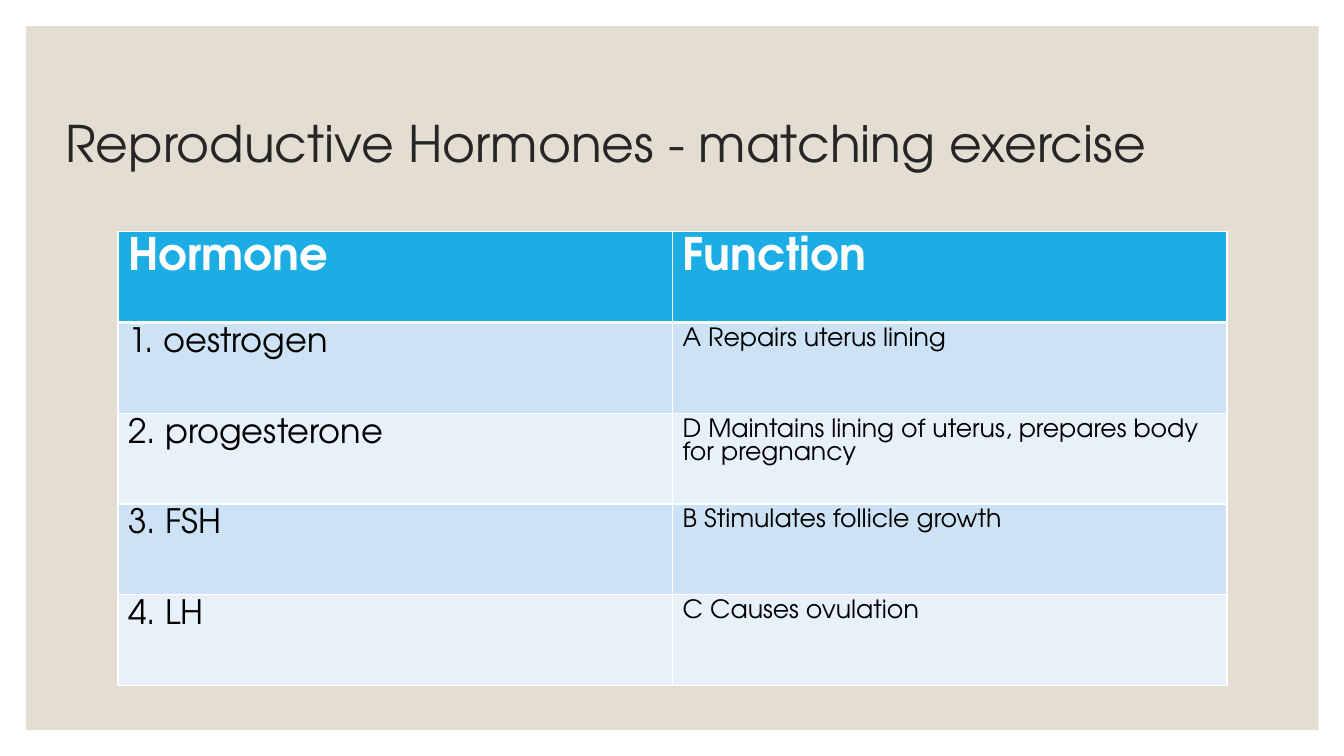
from lxml.etree import SubElement
from pptx import Presentation
from pptx.dml.color import RGBColor as Rgb
from pptx.enum.shapes import MSO_SHAPE as Shape
from pptx.enum.text import MSO_ANCHOR as Anchor
from pptx.oxml.ns import qn
from pptx.util import Inches, Pt

COLORS = {
    "panel": "E3DED1",
    "title": "262626",
    "header": "1CADE4",
    "odd": "CDE3F5",
    "even": "E8F1FA",
    "white": "FFFFFF",
    "black": "000000",
}
HORMONES = [
    ("Hormone", "Function"),
    ("1. oestrogen", "A Repairs uterus lining"),
    ("2. progesterone", "D Maintains lining of uterus, prepares body for pregnancy"),
    ("3. FSH", "B Stimulates follicle growth"),
    ("4. LH", "C Causes ovulation"),
]


class Lesson:
    font = "TeX Gyre Adventor"
    width, height = 13.33, 7.5

    def __init__(self):
        self.deck = Presentation()
        self.deck.slide_width = Inches(self.width)
        self.deck.slide_height = Inches(self.height)
        self.slide = self.deck.slides.add_slide(self.deck.slide_layouts[6])

    def color(self, name):
        return Rgb.from_string(COLORS[name])

    def box(self, left, top, width, height):
        return (
            Inches(self.width * left / 100),
            Inches(self.height * top / 100),
            Inches(self.width * width / 100),
            Inches(self.height * height / 100),
        )

    def wording(self, frame, words, size, color, bold=False):
        frame.text = words
        for run in frame.paragraphs[0].runs:
            run.font.name = self.font
            run.font.size = Pt(size)
            run.font.bold = bold
            run.font.color.rgb = self.color(color)

    def panel(self, *percent):
        panel = self.slide.shapes.add_shape(Shape.RECTANGLE, *self.box(*percent))
        panel.shadow.inherit = False
        panel.fill.solid()
        panel.fill.fore_color.rgb = self.color("panel")
        panel.line.fill.background()

    def title(self, words, *percent):
        frame = self.slide.shapes.add_textbox(*self.box(*percent)).text_frame
        frame.word_wrap = True
        frame.vertical_anchor = Anchor.MIDDLE
        self.wording(frame, words, 36, "title")
        frame.paragraphs[0].line_spacing = 0.9

    def border(self, cell, is_header, below_header):
        properties = cell._tc.get_or_add_tcPr()
        thick = {"lnB": is_header, "lnT": below_header}
        for position, side in enumerate(("lnL", "lnR", "lnT", "lnB")):
            points = 3 if thick.get(side) else 1
            edge = SubElement(properties, qn(f"a:{side}"), w=str(Pt(points)))
            fill = SubElement(edge, qn("a:solidFill"))
            SubElement(fill, qn("a:srgbClr"), val=COLORS["white"])
            properties.insert(position, edge)

    def table(self, rows, *percent):
        frame = self.slide.shapes.add_table(len(rows), len(rows[0]), *self.box(*percent))
        for row, pair in enumerate(rows):
            is_header = row == 0
            band = "header" if is_header else "odd" if row % 2 else "even"
            for column, words in enumerate(pair):
                cell = frame.table.cell(row, column)
                cell.fill.solid()
                cell.fill.fore_color.rgb = self.color(band)
                size = 32 if is_header else (24, 18)[column]
                ink = "white" if is_header else "black"
                self.wording(cell.text_frame, words, size, ink, is_header)
                self.border(cell, is_header, row == 1)

    def save(self):
        self.deck.save("out.pptx")


def main():
    lesson = Lesson()
    lesson.panel(1.95, 3.47, 96.17, 93.07)
    lesson.title("Reproductive Hormones - matching exercise", 4.13, 9.33, 87.17, 20)
    lesson.table(HORMONES, 8.78, 30.67, 82.52, 60)
    lesson.save()


if __name__ == "__main__":
    main()
